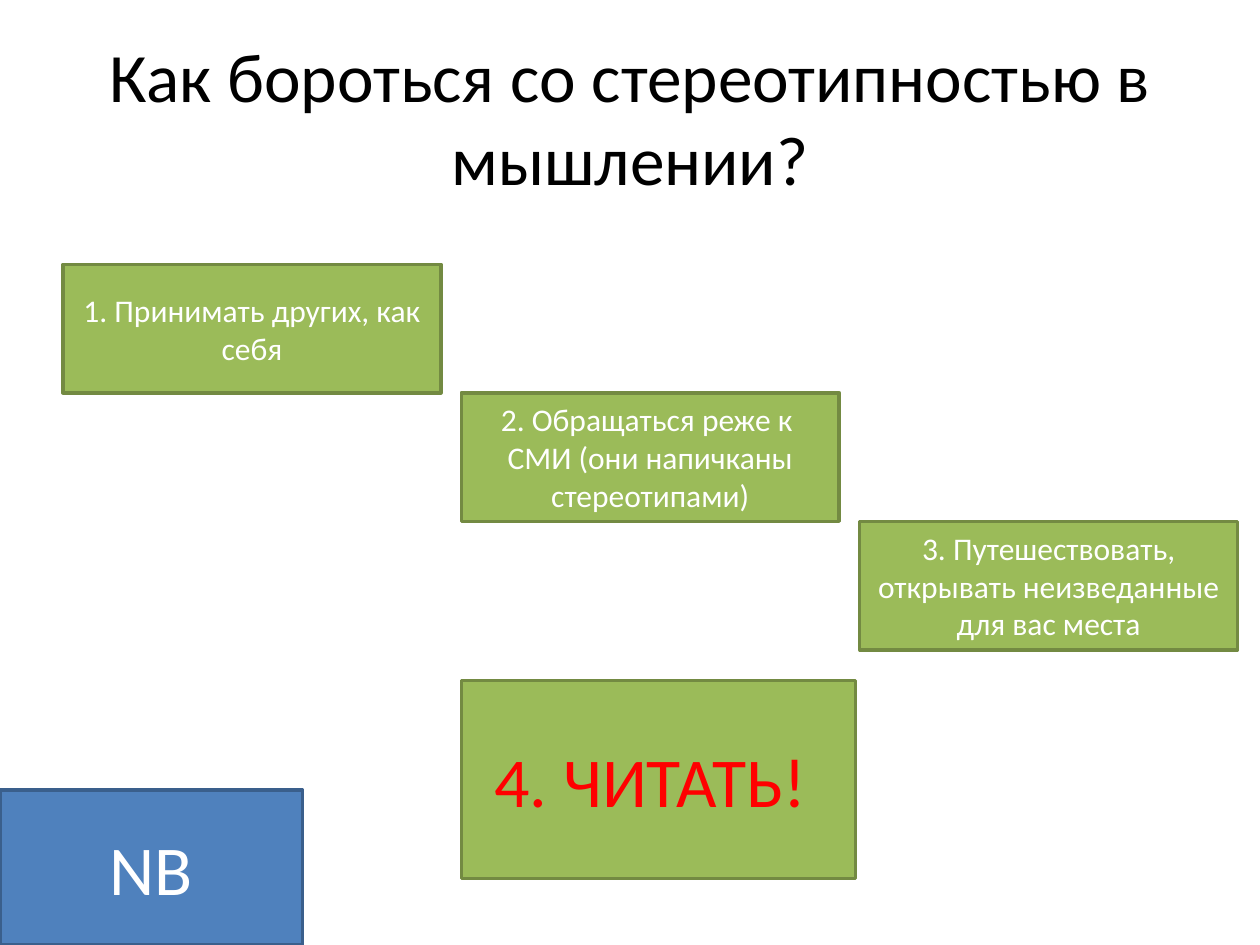
from dataclasses import dataclass

from pptx import Presentation
from pptx.dml.color import RGBColor
from pptx.enum.shapes import MSO_SHAPE
from pptx.enum.text import MSO_ANCHOR, PP_ALIGN
from pptx.util import Cm, Pt

RECT = MSO_SHAPE.RECTANGLE
MIDDLE = MSO_ANCHOR.MIDDLE
CENTER = PP_ALIGN.CENTER


@dataclass(frozen=True)
class Theme:
    font: str = "Calibri"
    black: str = "000000"
    white: str = "FFFFFF"
    red: str = "FF0000"
    green: tuple = ("9BBB59", "738A42")
    blue: tuple = ("4F81BD", "3A5F8C")
    title: float = 39.6
    large: float = 40
    body: float = 18
    line: float = 2


THEME = Theme()
TITLE = "Как бороться со стереотипностью в мышлении?"
STEPS = [
    "1. Принимать других, как себя",
    "2. Обращаться реже к  СМИ (они напичканы стереотипами)",
    "3. Путешествовать, открывать неизведанные для вас места",
]
READ = "4. ЧИТАТЬ! "
NOTE = "NB"

WIDE, HIGH = 25.4, 19.05
LEFT, TOP = 1.27, 5.33
STEP_W, STEP_H = 7.62, 2.59
GAP = 0.41
NOTE_W, NOTE_H = 6.1, 3.12


def write(shape, text, size, color):
    frame = shape.text_frame
    frame.word_wrap = True
    frame.vertical_anchor = MIDDLE
    frame.text = text
    line = frame.paragraphs[0]
    line.alignment = CENTER
    font = line.runs[0].font
    font.name = THEME.font
    font.size = Pt(size)
    font.color.rgb = RGBColor.from_string(color)


def add_box(slide, area, text, size, color, paint):
    box = slide.shapes.add_shape(RECT, *map(Cm, area))
    fill, edge = paint
    box.shadow.inherit = False
    box.fill.solid()
    box.fill.fore_color.rgb = RGBColor.from_string(fill)
    box.line.color.rgb = RGBColor.from_string(edge)
    box.line.width = Pt(THEME.line)
    write(box, text, size, color)


def main():
    deck = Presentation()
    deck.slide_width, deck.slide_height = Cm(WIDE), Cm(HIGH)
    slide = deck.slides.add_slide(deck.slide_layouts[6])

    head = slide.shapes.add_textbox(
        Cm(LEFT), Cm(0.76), Cm(WIDE - 2 * LEFT), Cm(3.18))
    write(head, TITLE, THEME.title, THEME.black)

    pitch = STEP_W + GAP
    for i, text in enumerate(STEPS):
        area = (LEFT + i * pitch, TOP + i * STEP_H, STEP_W, STEP_H)
        add_box(slide, area, text, THEME.body, THEME.white, THEME.green)

    area = (LEFT + pitch, 13.72, 7.95, 3.99)
    add_box(slide, area, READ, THEME.large, THEME.red, THEME.green)

    area = (0, HIGH - NOTE_H, NOTE_W, NOTE_H)
    add_box(slide, area, NOTE, THEME.large, THEME.white, THEME.blue)

    deck.save("out.pptx")


if __name__ == "__main__":
    main()
